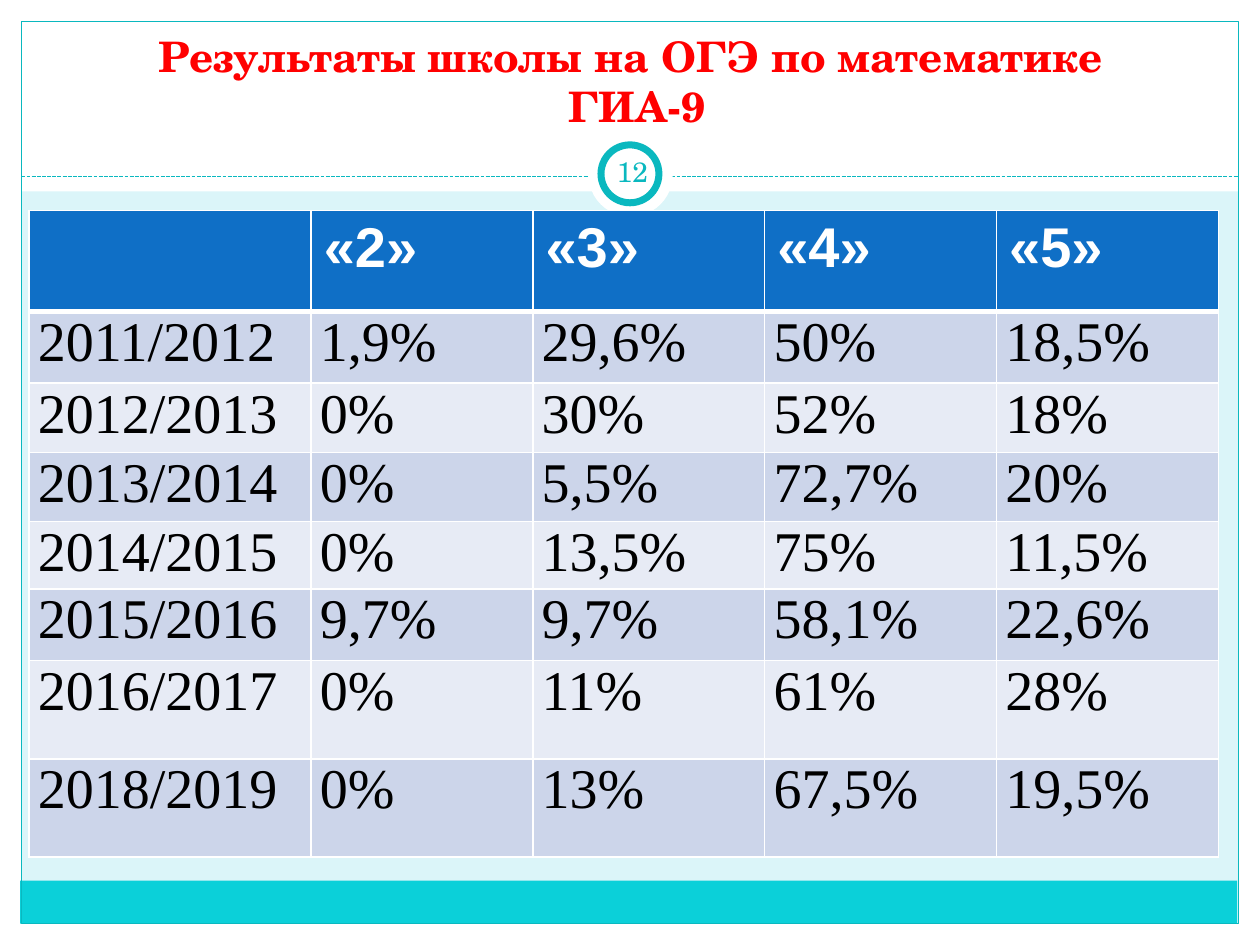
from dataclasses import dataclass
from typing import Any, Optional

from lxml import etree
from pptx import Presentation
from pptx import util as u
from pptx.dml.color import RGBColor
from pptx.enum import dml, shapes, text
from pptx.oxml import ns


@dataclass(frozen=True)
class Theme:
    """Colours, fonts and type sizes of the slide."""
    white: str = "FFFFFF"
    black: str = "000000"
    pale: str = "DBF5F9"
    teal: str = "0AB8BF"
    aqua: str = "0BD0D9"
    red: str = "FF0000"
    header: str = "0F6FC6"
    bands: tuple = ("CCD5EA", "E7EBF5")
    serif: str = "TeX Gyre Schola"
    head_font: str = "Arial"
    body_font: str = "Times New Roman"
    title_size: int = 24
    number_size: int = 16
    table_size: int = 32


@dataclass(frozen=True)
class Panel:
    """A plain shape of the frame."""
    left: float
    top: float
    width: float
    height: float
    fill: Optional[str] = None
    line: Optional[str] = None
    weight: float = 0.75
    kind: Any = shapes.MSO_SHAPE.RECTANGLE


@dataclass(frozen=True)
class Label:
    """A centred line of text in its own box."""
    words: str
    left: float
    top: float
    width: float
    height: float
    anchor: Any
    margin: float
    font: dict


THEME = Theme()
OVAL = shapes.MSO_SHAPE.OVAL
FRAME = (
    Panel(0, 7.33, 10, 0.17, THEME.white),
    Panel(0, 0, 10, 1.52, THEME.white),
    Panel(0, 0, 0.17, 7.5, THEME.white),
    Panel(9.83, 0, 0.17, 7.5, THEME.white),
    Panel(0.16, 6.99, 9.66, 0.34, THEME.aqua),
    Panel(0.17, 0.17, 9.66, 7.16, line=THEME.teal),
)
BADGE = (
    Panel(4.67, 1.05, 0.67, 0.67, THEME.white, kind=OVAL),
    Panel(4.77, 1.15, 0.46, 0.46, THEME.white, THEME.teal, 4, OVAL),
)
TITLE = Label("Результаты школы на ОГЭ по математике \vГИА-9", 0.39, 0.31, 9.33, 0.78,
              text.MSO_ANCHOR.BOTTOM, 0.05,
              {"name": THEME.serif, "size": THEME.title_size, "bold": True, "color": THEME.red})
NUMBER = Label("12", 4.77, 1.12, 0.5, 0.48, text.MSO_ANCHOR.MIDDLE, 0.05,
               {"name": THEME.serif, "size": THEME.number_size, "bold": False,
                "color": THEME.teal})
RESULTS = (
    ("", "«2»", "«3»", "«4»", "«5»"),
    ("2011/2012", "1,9%", "29,6%", "50%", "18,5%"),
    ("2012/2013", "0%", "30%", "52%", "18%"),
    ("2013/2014", "0%", "5,5%", "72,7%", "20%"),
    ("2014/2015", "0%", "13,5%", "75%", "11,5%"),
    ("2015/2016", "9,7%", "9,7%", "58,1%", "22,6%"),
    ("2016/2017", "0%", "11%", "61%", "28%"),
    ("2018/2019", "0%", "13%", "67,5%", "19,5%"),
)
COLUMNS = (2.24, 1.76, 1.84, 1.84, 1.76)
ROWS = (0.8, 0.57, 0.55, 0.55, 0.47, 0.57, 0.78, 0.78)


def set_font(font: Any, values: dict) -> None:
    """Apply a dict of font values."""
    for name, value in values.items():
        if name == "color":
            font.color.rgb = RGBColor.from_string(value)
        else:
            setattr(font, name, u.Pt(value) if name == "size" else value)


def set_fill(fill: Any, color: str) -> None:
    """Fill with one solid colour."""
    fill.solid()
    fill.fore_color.rgb = RGBColor.from_string(color)


def draw_panel(page: Any, panel: Panel) -> None:
    """Draw a frame shape."""
    box = page.shapes.add_shape(panel.kind, *map(
        u.Inches, (panel.left, panel.top, panel.width, panel.height)))
    box.shadow.inherit = False
    for fill, color in ((box.fill, panel.fill), (box.line.fill, panel.line)):
        if color:
            set_fill(fill, color)
        else:
            fill.background()
    if panel.line:
        box.line.width = u.Pt(panel.weight)


def draw_divider(page: Any) -> None:
    """Draw the dashed line below the title."""
    divider = page.shapes.add_connector(
        shapes.MSO_CONNECTOR.STRAIGHT, *map(u.Inches, (0.17, 1.4, 9.83, 1.4)))
    set_fill(divider.line.fill, THEME.teal)
    divider.line.width = u.Pt(0.75)
    divider.line.dash_style = dml.MSO_LINE.SQUARE_DOT
    etree.SubElement(divider._element.spPr, ns.qn("a:effectLst"))


def draw_label(page: Any, label: Label) -> None:
    """Draw a centred text box."""
    box = page.shapes.add_textbox(*map(
        u.Inches, (label.left, label.top, label.width, label.height)))
    frame = box.text_frame
    margin = u.Inches(label.margin)
    values = {"word_wrap": True, "vertical_anchor": label.anchor, "margin_left": margin,
              "margin_right": margin, "margin_top": margin, "margin_bottom": margin}
    for name, value in values.items():
        setattr(frame, name, value)
    para = frame.paragraphs[0]
    para.text = label.words
    para.alignment = text.PP_ALIGN.CENTER
    for span in para.runs:
        set_font(span.font, label.font)


def set_borders(cell: Any, weights: dict) -> None:
    """Give a cell white borders of the given point widths."""
    properties = cell._tc.get_or_add_tcPr()
    for side, weight in weights.items():
        line = etree.SubElement(properties, ns.qn(f"a:ln{side}"), w=str(u.Pt(weight)))
        solid = etree.SubElement(line, ns.qn("a:solidFill"))
        etree.SubElement(solid, ns.qn("a:srgbClr"), val=THEME.white)


def draw_results(page: Any) -> None:
    """Draw the table of marks by school year."""
    table = page.shapes.add_table(
        len(ROWS), len(COLUMNS), u.Inches(0.23), u.Inches(1.67),
        u.Inches(sum(COLUMNS)), u.Inches(sum(ROWS))).table
    for column, width in zip(table.columns, COLUMNS):
        column.width = u.Inches(width)
    for index, (row, height, words) in enumerate(zip(table.rows, ROWS, RESULTS)):
        row.height = u.Inches(height)
        is_head = index == 0
        fill = THEME.header if is_head else THEME.bands[(index - 1) % 2]
        font = {"name": THEME.head_font if is_head else THEME.body_font,
                "size": THEME.table_size, "bold": is_head,
                "color": THEME.white if is_head else THEME.black}
        side, edge = (0.1, 0.05) if is_head else (0.07, 0)
        margins = {"margin_left": side, "margin_right": side,
                   "margin_top": edge, "margin_bottom": edge}
        borders = {"L": 1, "R": 1, "T": 3 if index == 1 else 1, "B": 3 if is_head else 1}
        for cell, value in zip(row.cells, words):
            set_borders(cell, borders)
            set_fill(cell.fill, fill)
            for name, margin in margins.items():
                setattr(cell, name, u.Inches(margin))
            para = cell.text_frame.paragraphs[0]
            para.alignment = text.PP_ALIGN.LEFT if is_head else text.PP_ALIGN.JUSTIFY
            if value:
                span = para.add_run()
                span.text = value
                set_font(span.font, font)


def main() -> None:
    """Build and save the slide."""
    deck = Presentation()
    deck.slide_width, deck.slide_height = u.Inches(10), u.Inches(7.5)
    page = deck.slides.add_slide(deck.slide_layouts[6])
    set_fill(page.background.fill, THEME.pale)
    for panel in FRAME:
        draw_panel(page, panel)
    draw_divider(page)
    for panel in BADGE:
        draw_panel(page, panel)
    draw_label(page, TITLE)
    draw_results(page)
    draw_label(page, NUMBER)
    deck.save("out.pptx")


if __name__ == "__main__":
    main()
